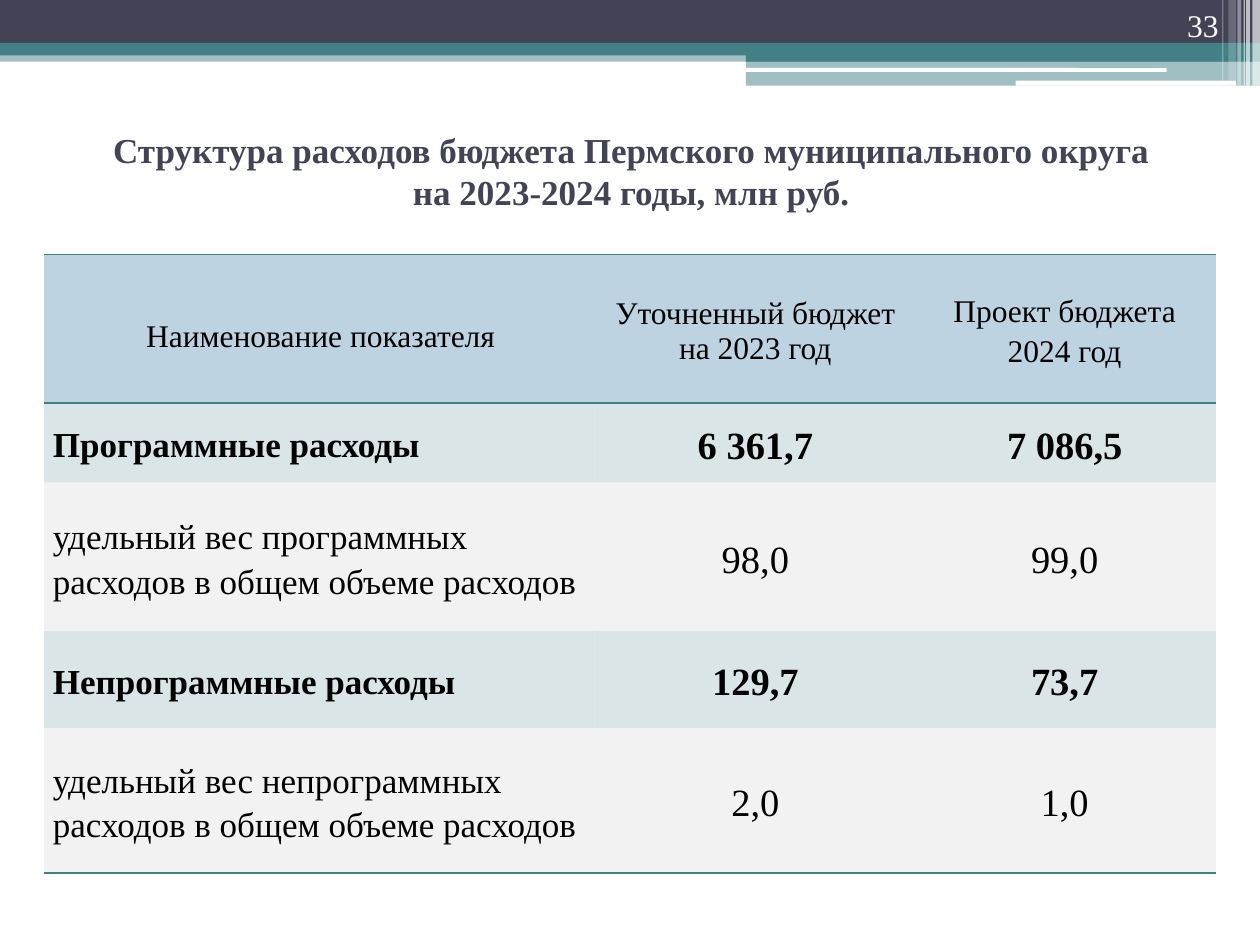
from lxml.etree import SubElement
from pptx import Presentation
from pptx.dml.color import RGBColor
from pptx.enum.shapes import MSO_SHAPE as SHAPE
from pptx.enum.text import MSO_ANCHOR as ANCHOR, PP_ALIGN as ALIGN
from pptx.oxml.ns import qn
from pptx.util import Pt

PX = 9144
FONT = "Times New Roman"
NO_STYLE = "{2D5ABB26-0587-4C30-8999-92F81FD0307C}"
NAVY = RGBColor(0x42, 0x44, 0x56)
TEAL = RGBColor(0x43, 0x80, 0x86)
WHITE = RGBColor(0xFF, 0xFF, 0xFF)
BLACK = RGBColor(0, 0, 0)
BLUE = RGBColor(0xBE, 0xD3, 0xE1)
GRAY = RGBColor(0xF2, 0xF2, 0xF2)

BANDS = [
    (SHAPE.RECTANGLE, 0, 40, 1000, 9, TEAL, 50),
    (SHAPE.RECTANGLE, 0, 0, 1000, 34, NAVY, 100),
    (SHAPE.RECTANGLE, 0, 34, 1000, 10, TEAL, 100),
    (SHAPE.RECTANGLE, 592, 39, 408, 10, TEAL, 100),
    (SHAPE.RECTANGLE, 592, 48, 408, 20, TEAL, 50),
    (SHAPE.ROUNDED_RECTANGLE, 591, 54, 335, 3, WHITE, 100),
    (SHAPE.ROUNDED_RECTANGLE, 806, 64, 175, 4, WHITE, 100),
]
STRIPES = [(994, 6, 68, 65), (989, 3, 68, 65), (987, 1, 68, 60),
           (982, 3, 68, 40), (975, 6, 64, 20), (970, 1, 64, 30)]
TITLE = ["Структура расходов бюджета Пермского муниципального округа",
         "на 2023-2024 годы, млн руб."]
PAGE = "33"
HEADER = [
    [("Наименование показателя", 1.15)],
    [("Уточненный бюджет", 1.15), ("на 2023 год", 1)],
    [("Проект бюджета", 1.15), ("2024 год", 1.15)],
]
ROWS = [
    ("Программные расходы", "6 361,7", "7 086,5"),
    ("удельный вес программных расходов в общем объеме расходов", "98,0", "99,0"),
    ("Непрограммные расходы", "129,7", "73,7"),
    ("удельный вес непрограммных расходов в общем объеме расходов", "2,0", "1,0"),
]
COL_WIDTHS = [439, 251, 240]
ROW_HEIGHTS = [118, 63, 118, 77, 115]


def px(*values):
    return [v * PX for v in values]


def paint(fill, parent, color, alpha):
    fill.solid()
    fill.fore_color.rgb = color
    if alpha < 100:
        clr = next(parent.iter(qn("a:srgbClr")))
        SubElement(clr, qn("a:alpha"), val=str(alpha * 1000))


def add_band(kind, x, y, w, h, color, alpha):
    s = shapes.add_shape(kind, *px(x, y, w, h))
    s.shadow.inherit = False
    s.line.fill.background()
    paint(s.fill, s.fill._xPr, color, alpha)


def add_run(p, text, size, color, bold=False):
    r = p.add_run()
    r.text = text
    r.font.name = FONT
    r.font.size = Pt(size)
    r.font.bold = bold
    r.font.color.rgb = color


def add_text(lines, box, size, color, bold, align, anchor):
    tf = shapes.add_textbox(*px(*box)).text_frame
    tf.word_wrap = True
    tf.vertical_anchor = anchor
    p = tf.paragraphs[0]
    p.alignment = align
    for i, line in enumerate(lines):
        if i:
            p.add_line_break()
        add_run(p, line, size, color, bold)


def fill_cell(cell, lines, size, bold, align, color, alpha, edges):
    cell.margin_left = cell.margin_right = 7 * PX
    cell.margin_top = cell.margin_bottom = 0
    cell.vertical_anchor = ANCHOR.MIDDLE
    tf = cell.text_frame
    for i, (text, spacing) in enumerate(lines):
        p = tf.add_paragraph() if i else tf.paragraphs[0]
        p.alignment = align
        p.line_spacing = spacing
        add_run(p, text, size, BLACK, bold)
    tc_pr = cell._tc.get_or_add_tcPr()
    for edge in edges:
        ln = SubElement(tc_pr, qn(f"a:{edge}"), w=str(Pt(1)))
        SubElement(SubElement(ln, qn("a:solidFill")), qn("a:srgbClr"), val=str(TEAL))
    cell.fill.solid()
    fill = tc_pr.find(qn("a:solidFill"))
    paint(cell.fill, fill, color, 100)
    if alpha < 100:
        SubElement(fill.find(qn("a:srgbClr")), qn("a:alpha"), val=str(alpha * 1000))


prs = Presentation()
prs.slide_width, prs.slide_height = px(1000, 750)
shapes = prs.slides.add_slide(prs.slide_layouts[6]).shapes

for band in BANDS:
    add_band(*band)
for x, w, h, alpha in STRIPES:
    add_band(SHAPE.RECTANGLE, x, 0, w, h, WHITE, alpha)

add_text(TITLE, (51, 84, 900, 102), 20, NAVY, True, ALIGN.CENTER, ANCHOR.MIDDLE)

frame = shapes.add_table(len(ROWS) + 1, len(HEADER),
                         *px(35, 202, sum(COL_WIDTHS), sum(ROW_HEIGHTS)))
table = frame.table
table._tbl.tblPr.find(qn("a:tableStyleId")).text = NO_STYLE
table.horz_banding = False
for col, width in zip(table.columns, COL_WIDTHS):
    col.width = width * PX
for row, height in zip(table.rows, ROW_HEIGHTS):
    row.height = height * PX

for c, lines in enumerate(HEADER):
    fill_cell(table.cell(0, c), lines, 18, False, ALIGN.CENTER, BLUE, 100, ["lnT", "lnB"])
name_head = table.cell(0, 0)
name_head.vertical_anchor = ANCHOR.TOP
name_head.margin_top = 47 * PX

for r, values in enumerate(ROWS, 1):
    total = r % 2 == 1
    color, alpha = (TEAL, 20) if total else (GRAY, 100)
    edges = ["lnB"] if r == len(ROWS) else []
    for c, value in enumerate(values):
        size, align = (22, ALIGN.CENTER) if c else (20, ALIGN.LEFT)
        fill_cell(table.cell(r, c), [(value, 1.15)], size, total, align, color, alpha, edges)

add_text([PAGE], (894, 0, 83, 40), 18, WHITE, False, ALIGN.RIGHT, ANCHOR.BOTTOM)

prs.save("out.pptx")
